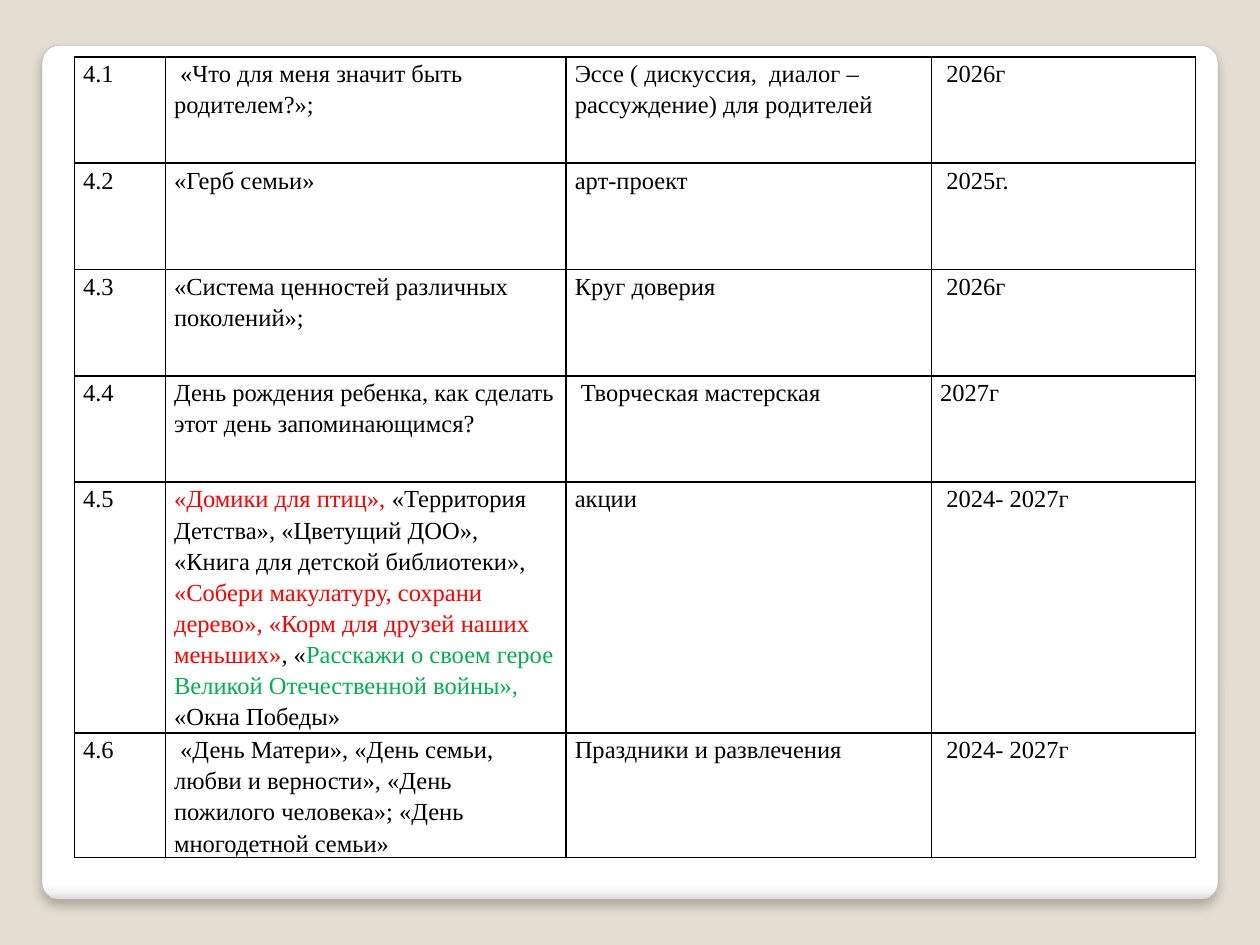
import pptx
import pptx.dml.color
import pptx.enum.shapes
import pptx.oxml
import pptx.oxml.ns
import pptx.util

Pt = pptx.util.Pt
qn = pptx.oxml.ns.qn

BLACK, RED, GREEN = "000000", "FF0000", "00B050"


def rgb(value):
    return pptx.dml.color.RGBColor.from_string(value)


def xml(body):
    """Parse one DrawingML element written without its namespace."""
    tag, rest = body[1:].split(" ", 1)
    return pptx.oxml.parse_xml(f"<{tag} {pptx.oxml.ns.nsdecls('a')} {rest}")


def add_run(p, text, font="Times New Roman", size=14, color=BLACK):
    r = p.add_run()
    r.text = text
    r.font.name = font
    r.font.size = Pt(size)
    r.font.color.rgb = rgb(color)
    return r


class SlideBuilder:
    border = 1
    inset = 5
    line_spacing = 1.15

    def __init__(self, prs, background):
        self.s = prs.slides.add_slide(prs.slide_layouts[6])
        fill = self.s.background.fill
        fill.solid()
        fill.fore_color.rgb = rgb(background)

    def panel(self, x, y, w, h, stops):
        """Rounded panel with a vertical gradient and a soft shadow."""
        sp = self.s.shapes.add_shape(
            pptx.enum.shapes.MSO_SHAPE.ROUNDED_RECTANGLE,
            Pt(x), Pt(y), Pt(w), Pt(h))
        sp.adjustments[0] = 0.02
        sp.fill.gradient()
        sp.fill.gradient_angle = 270
        sp.line.color.rgb = rgb("A4A4A4")
        sp.line.width = Pt(0.16)
        sp.shadow.inherit = False

        props = sp._element.spPr
        gs_list = props.find(qn("a:gradFill")).find(qn("a:gsLst"))
        for gs in list(gs_list):
            gs_list.remove(gs)
        for percent, color in stops:
            gs_list.append(xml(f'<a:gs pos="{percent * 1000}">'
                               f'<a:srgbClr val="{color}"/></a:gs>'))
        props.find(qn("a:effectLst")).append(xml(
            f'<a:outerShdw blurRad="{Pt(6)}" dist="{Pt(4)}" dir="5400000" '
            'algn="ctr" rotWithShape="0"><a:srgbClr val="000000">'
            '<a:alpha val="25000"/></a:srgbClr></a:outerShdw>'))

    def table(self, x, y, widths, heights, rows):
        frame = self.s.shapes.add_table(
            len(heights), len(widths), Pt(x), Pt(y),
            Pt(sum(widths)), Pt(sum(heights)))
        table = frame.table
        table.first_row = table.horz_banding = False
        for column, width in zip(table.columns, widths):
            column.width = Pt(width)
        for row, height, texts in zip(table.rows, heights, rows):
            row.height = Pt(height)
            for cell, text in zip(row.cells, texts):
                self.cell(cell, text)

    def cell(self, cell, content):
        """Fill one cell; content is a string or a list of (text, colour)."""
        cell.fill.background()
        cell.margin_left = cell.margin_right = Pt(self.inset)
        cell.margin_top = cell.margin_bottom = 0
        p = cell.text_frame.paragraphs[0]
        p.line_spacing = self.line_spacing
        runs = [(content, BLACK)] if isinstance(content, str) else content
        for text, color in runs:
            add_run(p, text, color=color)
        props = cell._tc.get_or_add_tcPr()
        for i, side in enumerate("LRTB"):
            props.insert(i, xml(
                f'<a:ln{side} w="{Pt(self.border)}"><a:solidFill>'
                f'<a:srgbClr val="{BLACK}"/></a:solidFill></a:ln{side}>'))


ACTIONS = [
    ("«Домики для птиц», ", RED),
    ("«Территория Детства», «Цветущий ДОО», "
     "«Книга для детской библиотеки», ", BLACK),
    ("«Собери макулатуру, сохрани дерево», "
     "«Корм для друзей наших меньших»", RED),
    (", «", BLACK),
    ("Расскажи о своем герое Великой Отечественной войны», ", GREEN),
    ("«Окна Победы»", BLACK),
]

PLAN = [
    ("4.1", " «Что для меня значит быть родителем?»;",
     "Эссе ( дискуссия,  диалог – рассуждение) для родителей", " 2026г"),
    ("4.2", "«Герб семьи»", "арт-проект", " 2025г."),
    ("4.3", "«Система ценностей различных поколений»;",
     "Круг доверия", " 2026г"),
    ("4.4", "День рождения ребенка, как сделать этот день запоминающимся?",
     " Творческая мастерская", "2027г"),
    ("4.5", ACTIONS, "акции", " 2024- 2027г"),
    ("4.6", " «День Матери», «День семьи, любви и верности», "
     "«День пожилого человека»; «День многодетной семьи»",
     "Праздники и развлечения", " 2024- 2027г"),
]


def main():
    prs = pptx.Presentation()
    prs.slide_width, prs.slide_height = Pt(720), Pt(540)
    slide = SlideBuilder(prs, "E3DED1")

    # White panel behind the table
    slide.panel(24, 26, 672, 488, [(0, "FFFFFF"), (98, "FFFFFF"),
                                   (99, "F7F7F7"), (100, "DADADA")])

    # Plan of family events
    slide.table(42.5, 32.5, widths=[52, 229, 208.8, 151],
                heights=[60.75] * 4 + [143.3, 71], rows=PLAN)

    prs.save("out.pptx")


if __name__ == "__main__":
    main()
